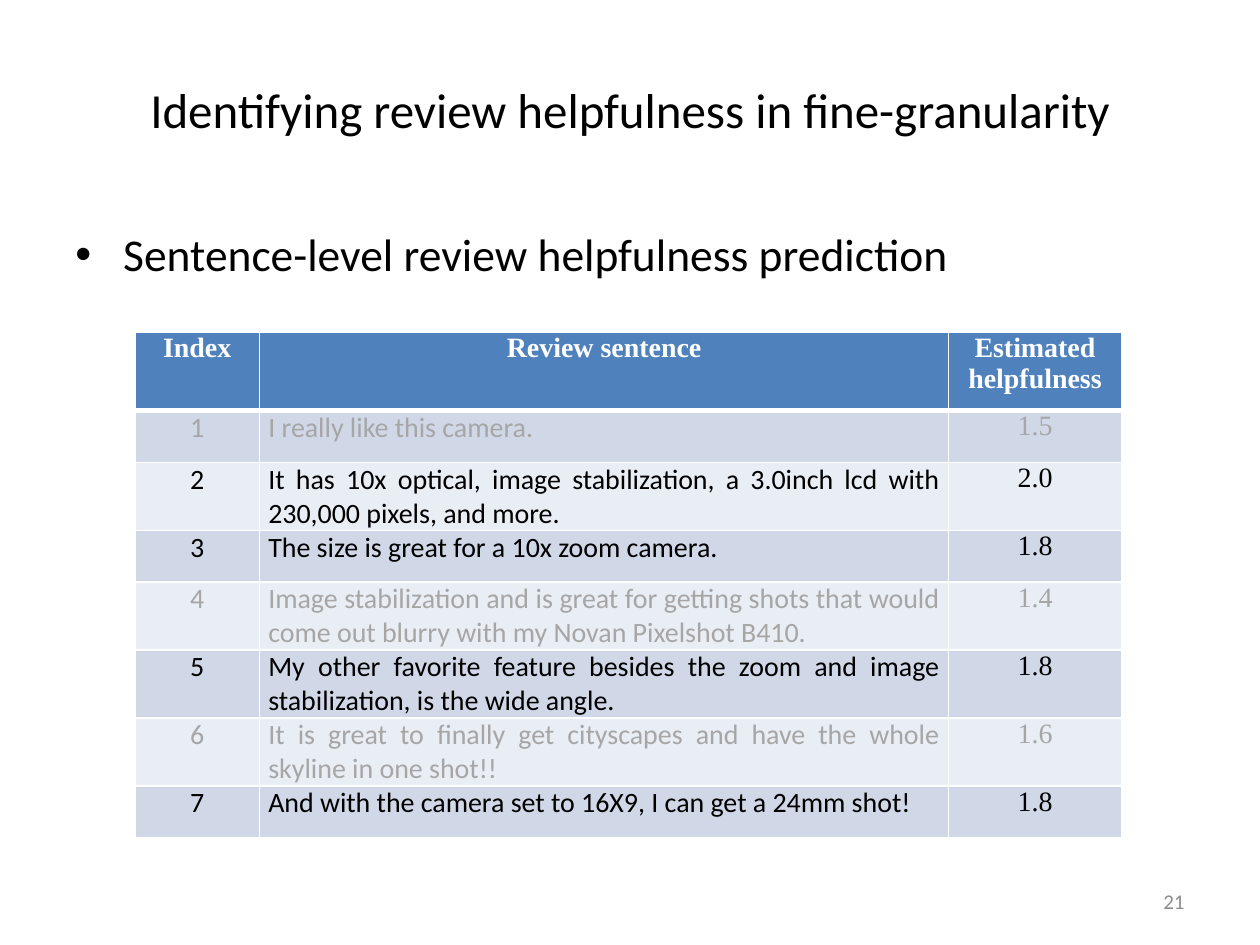
from lxml.etree import SubElement
from pptx import Presentation
from pptx.dml.color import RGBColor
from pptx.enum.text import MSO_ANCHOR, PP_ALIGN
from pptx.oxml import parse_xml
from pptx.oxml.ns import nsdecls, qn
from pptx.util import Inches, Pt

WIDE, HIGH = 10, 7.5
HUES = {"ink": "000000", "dim": "A6A6A6", "page": "8C8C8C", "white": "FFFFFF",
        "head": "4F81BD", "odd": "D0D8E8", "even": "E9EDF4"}
SANS, SERIF = "Calibri", "Times New Roman"
LEFT, MID, RIGHT, JUST = (PP_ALIGN.LEFT, PP_ALIGN.CENTER,
                          PP_ALIGN.RIGHT, PP_ALIGN.JUSTIFY)

COLS = [0.99, 5.47, 1.37]
TALL, SHORT, PAIR = 0.62, 0.41, 0.54
LIMIT = 1.8  # sentences scored below this are dimmed
HEADS = ["Index", "Review sentence", "Estimated helpfulness"]
# Sentence, score, row height
ROWS = [
    ("I really like this camera.", 1.5, SHORT),
    ("It has 10x optical, image stabilization, a 3.0inch lcd with "
     "230,000 pixels, and more.", 2.0, PAIR),
    ("The size is great for a 10x zoom camera.", 1.8, SHORT),
    ("Image stabilization and is great for getting shots that would "
     "come out blurry with my Novan Pixelshot B410.", 1.4, PAIR),
    ("My other favorite feature besides the zoom and image "
     "stabilization, is the wide angle.", 1.8, PAIR),
    ("It is great to finally get cityscapes and have the whole "
     "skyline in one shot!!", 1.6, PAIR),
    ("And with the camera set to 16X9, I can get a 24mm shot!", 1.8, SHORT),
]


def write(frame, text, size=16, font=SANS, hue="ink", bold=False, align=LEFT):
    """Put one formatted paragraph in a text frame."""
    para = frame.paragraphs[0]
    para.alignment = align
    run = para.add_run()
    run.text = text
    run.font.size, run.font.name, run.font.bold = Pt(size), font, bold
    run.font.color.rgb = RGBColor.from_string(HUES[hue])
    return para


def box(slide, x, y, w, h, anchor=MSO_ANCHOR.TOP):
    """Add a wrapping text box placed by shares of the slide."""
    frame = slide.shapes.add_textbox(
        Inches(x * WIDE), Inches(y * HIGH),
        Inches(w * WIDE), Inches(h * HIGH)).text_frame
    frame.word_wrap = True
    frame.vertical_anchor = anchor
    return frame


def bullet(para, indent=0.38, gap=5.2):
    """Give a paragraph a hanging round bullet."""
    para.space_before = Pt(gap)
    props = para._p.get_or_add_pPr()
    props.set("marL", str(Inches(indent)))
    props.set("indent", str(-Inches(indent)))
    SubElement(props, qn("a:buFont")).set("typeface", "Arial")
    SubElement(props, qn("a:buChar")).set("char", "•")


def edge(cell, top=1, low=1):
    """Draw white cell borders, with widths in points."""
    props = cell._tc.get_or_add_tcPr()
    for spot, (side, width) in enumerate(
            [("L", 1), ("R", 1), ("T", top), ("B", low)]):
        props.insert(spot, parse_xml(
            f'<a:ln{side} {nsdecls("a")} w="{Pt(width)}"><a:solidFill>'
            f'<a:srgbClr val="{HUES["white"]}"/></a:solidFill></a:ln{side}>'))


def fill(cell, text, back, top=1, low=1, **style):
    """Set the text, margins, fill and borders of a cell."""
    cell.margin_left = cell.margin_right = Inches(0.07)
    cell.margin_top = cell.margin_bottom = 0
    cell.fill.solid()
    cell.fill.fore_color.rgb = RGBColor.from_string(HUES[back])
    edge(cell, top, low)
    write(cell.text_frame, text, **style)


def table(slide, x, y):
    """Build the table of sentences and scores."""
    highs = [TALL] + [row[2] for row in ROWS]
    grid = slide.shapes.add_table(
        len(highs), len(COLS), Inches(x * WIDE), Inches(y * HIGH),
        Inches(sum(COLS)), Inches(sum(highs))).table
    for col, width in zip(grid.columns, COLS):
        col.width = Inches(width)
    for row, high in zip(grid.rows, highs):
        row.height = Inches(high)

    # Header row
    for col, text in enumerate(HEADS):
        fill(grid.cell(0, col), text, "head", low=3,
             font=SERIF, hue="white", bold=True, align=MID)

    # Sentence rows
    for num, (text, score, _) in enumerate(ROWS, 1):
        look = {"back": "odd" if num % 2 else "even",
                "top": 3 if num == 1 else 1,
                "hue": "dim" if score < LIMIT else "ink"}
        fill(grid.cell(num, 0), str(num), align=MID, **look)
        fill(grid.cell(num, 1), text, align=JUST, **look)
        fill(grid.cell(num, 2), f"{score:.1f}", font=SERIF, align=MID, **look)


def main():
    deck = Presentation()
    deck.slide_width, deck.slide_height = Inches(WIDE), Inches(HIGH)
    slide = deck.slides.add_slide(deck.slide_layouts[6])

    # Title
    write(box(slide, 0.05, 0.03, 0.9, 0.17, MSO_ANCHOR.MIDDLE),
          "Identifying review helpfulness in fine-granularity",
          size=28, align=MID)

    # Bullet point
    bullet(write(box(slide, 0.05, 0.233, 0.9, 0.66),
                 "Sentence-level review helpfulness prediction", size=26))

    table(slide, 0.107, 0.352)

    # Page number
    write(box(slide, 0.717, 0.927, 0.233, 0.053, MSO_ANCHOR.MIDDLE),
          "21", size=12, hue="page", align=RIGHT)

    deck.save("out.pptx")


if __name__ == "__main__":
    main()
